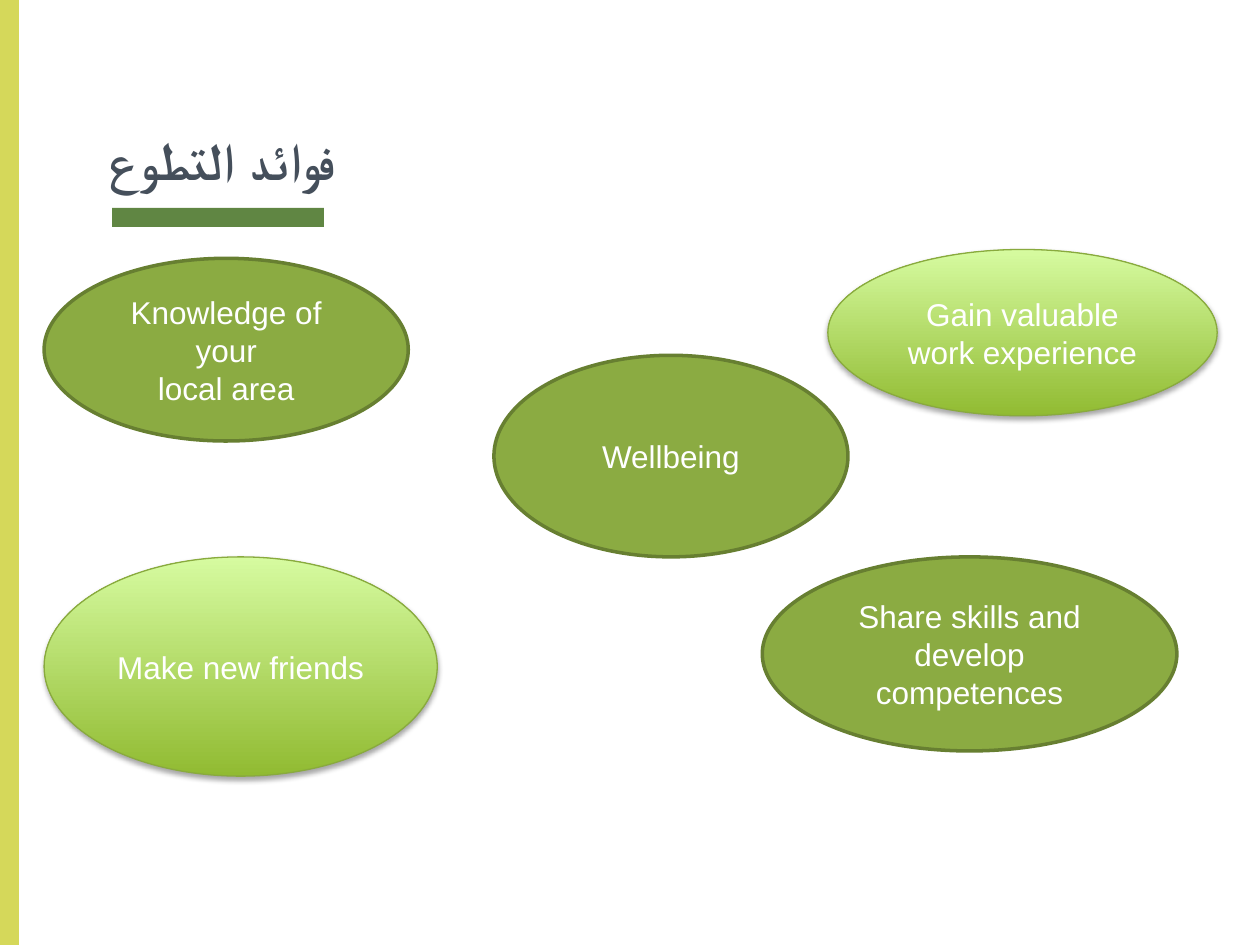
from lxml import etree
from pptx import Presentation
from pptx.dml.color import RGBColor
from pptx.enum.shapes import MSO_SHAPE
from pptx.enum.text import MSO_ANCHOR, MSO_AUTO_SIZE, PP_ALIGN
from pptx.oxml.ns import qn
from pptx.util import Pt

RECTANGLE, OVAL = MSO_SHAPE.RECTANGLE, MSO_SHAPE.OVAL
MIDDLE, BOTTOM = MSO_ANCHOR.MIDDLE, MSO_ANCHOR.BOTTOM
LEFT, CENTER = PP_ALIGN.LEFT, PP_ALIGN.CENTER
NO_AUTOFIT = MSO_AUTO_SIZE.NONE

TITLE = "فوائد التطوع"
TITLE_BOX = (54.72, 19.44, 457.92, 97.2)
BARS = [
    ((64.08, 118.8, 120.96, 10.8), "608643"),
    ((0, 0, 10.8, 540), "D5D85A"),
]
BENEFITS = [
    (["Wellbeing"], (282.24, 203.04, 202.32, 115.2), "flat"),
    (["Gain valuable work experience"], (473.04, 142.56, 222.48, 95.04), "glossy"),
    (["Knowledge of your", "local area"], (25.2, 147.6, 208.08, 104.4), "flat"),
    (["Make new friends"], (25.2, 318.24, 224.64, 125.28), "glossy"),
    (["Share skills and develop competences"], (435.6, 318.24, 236.88, 110.88), "flat"),
]
STYLES = {
    "flat": {"fill": ["8BAB42"], "line": "677F31", "width": 2},
    "glossy": {"fill": ["91BB32", "D6FBA0"], "line": "89AA3E", "width": 0.75},
}


def color(hex_code):
    return RGBColor.from_string(hex_code)


def add_run(paragraph, text, font, size, hex_code, bold=False):
    run = paragraph.add_run()
    run.text = text
    run.font.name, run.font.size, run.font.bold = font, Pt(size), bold
    run.font.color.rgb = color(hex_code)
    return run


def add_shape(slide, kind, box):
    shape = slide.shapes.add_shape(kind, *map(Pt, box))
    shape.shadow.inherit = False
    return shape


def add_bar(slide, box, fill):
    bar = add_shape(slide, RECTANGLE, box)
    bar.fill.solid()
    bar.fill.fore_color.rgb = color(fill)
    bar.line.fill.background()


def add_title(slide):
    title = slide.shapes.title
    title.left, title.top, title.width, title.height = map(Pt, TITLE_BOX)
    frame = title.text_frame
    frame.auto_size, frame.word_wrap = NO_AUTOFIT, True
    frame.vertical_anchor = BOTTOM
    frame.margin_left = frame.margin_right = Pt(7.2)
    frame.margin_top = frame.margin_bottom = Pt(7.2)
    frame.paragraphs[0].alignment = LEFT
    run = add_run(frame.paragraphs[0], TITLE, "Montserrat", 30, "454F5B", True)
    etree.SubElement(run.font._element, qn("a:cs"), typeface="Montserrat")


def drop_shadow(shape):
    effects = shape._element.spPr.find(qn("a:effectLst"))
    shadow = etree.SubElement(
        effects, qn("a:outerShdw"), blurRad=str(Pt(3.1)), dist=str(Pt(1.8)),
        dir="5400000", rotWithShape="0")
    black = etree.SubElement(shadow, qn("a:srgbClr"), val="000000")
    etree.SubElement(black, qn("a:alpha"), val="35000")


def add_benefit(slide, lines, box, style_name):
    style = STYLES[style_name]
    oval = add_shape(slide, OVAL, box)
    if len(style["fill"]) == 1:
        oval.fill.solid()
        oval.fill.fore_color.rgb = color(style["fill"][0])
    else:
        oval.fill.gradient()
        oval.fill.gradient_angle = 90
        for stop, hex_code in zip(oval.fill.gradient_stops, style["fill"]):
            stop.color.rgb = color(hex_code)
        drop_shadow(oval)
    oval.line.color.rgb = color(style["line"])
    oval.line.width = Pt(style["width"])
    frame = oval.text_frame
    frame.word_wrap, frame.vertical_anchor = True, MIDDLE
    for index, line in enumerate(lines):
        paragraph = frame.add_paragraph() if index else frame.paragraphs[0]
        paragraph.alignment = CENTER
        add_run(paragraph, line, "Arial", 18, "FFFFFF")


def main():
    """Build the slide on the benefits of volunteering."""
    deck = Presentation()
    deck.slide_width, deck.slide_height = Pt(720), Pt(540)
    slide = deck.slides.add_slide(deck.slide_layouts[5])
    for box, fill in BARS:
        add_bar(slide, box, fill)
    add_title(slide)
    for lines, box, style_name in BENEFITS:
        add_benefit(slide, lines, box, style_name)
    deck.save("out.pptx")


if __name__ == "__main__":
    main()
